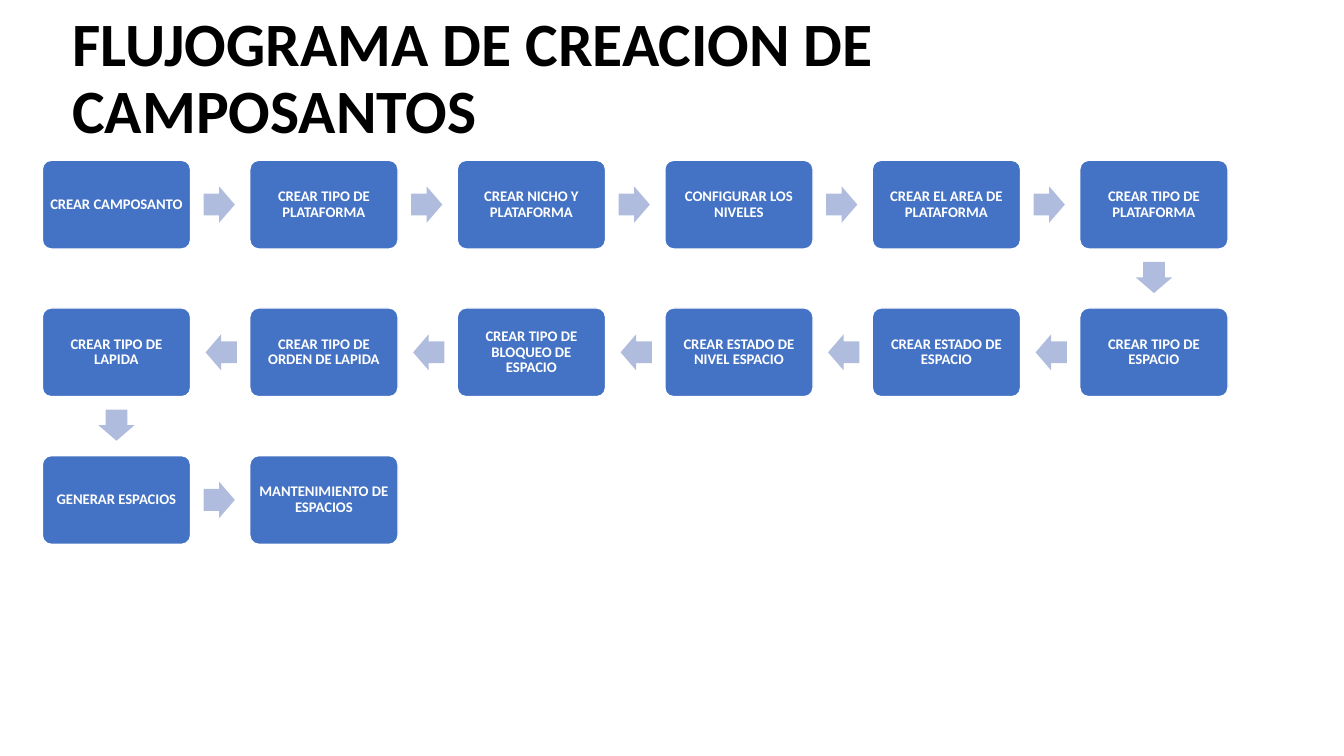
from pptx import Presentation
from pptx import util as u
from pptx.dml.color import RGBColor
from pptx.enum import shapes, text

EMU_PER_PX = 9144  # 100 px to the inch
FONT = "Calibri"
BLUE, PALE_BLUE, WHITE, BLACK = "4472C4", "B0BCDE", "FFFFFF", "000000"

TITLE = "FLUJOGRAMA DE CREACION DE CAMPOSANTOS"
STEPS = [
    "CREAR CAMPOSANTO", "CREAR TIPO DE PLATAFORMA", "CREAR NICHO Y PLATAFORMA",
    "CONFIGURAR LOS NIVELES", "CREAR EL AREA DE PLATAFORMA", "CREAR TIPO DE PLATAFORMA",
    "CREAR TIPO DE ESPACIO", "CREAR ESTADO DE ESPACIO", "CREAR ESTADO DE NIVEL ESPACIO",
    "CREAR TIPO DE BLOQUEO DE ESPACIO", "CREAR TIPO DE ORDEN DE LAPIDA", "CREAR TIPO DE LAPIDA",
    "GENERAR ESPACIOS", "MANTENIMIENTO DE ESPACIOS",
]
COLUMNS, ROWS = 6, 3
STEP_WIDTH, STEP_HEIGHT, STEP_INSET = 147, 88, 5
ARROW_LENGTH, ARROW_BREADTH = 31, 36


def px(length):
    return u.Emu(round(length * EMU_PER_PX))


def color(hex_string):
    return RGBColor.from_string(hex_string)


def write(shape, content, size, hex_string, alignment):
    frame = shape.text_frame
    frame.text = content
    frame.word_wrap = True
    frame.vertical_anchor = text.MSO_ANCHOR.MIDDLE
    paragraph = frame.paragraphs[0]
    paragraph.alignment = alignment
    paragraph.line_spacing = 0.9
    font = paragraph.runs[0].font
    font.name, font.size, font.bold = FONT, u.Pt(size), True
    font.color.rgb = color(hex_string)


def add_filled(slide, kind, box, fill):
    shape = slide.shapes.add_shape(kind, *map(px, box))
    shape.shadow.inherit = False
    shape.fill.solid()
    shape.fill.fore_color.rgb = color(fill)
    return shape


def add_title(slide, box):
    title = slide.shapes.add_textbox(*map(px, box))
    write(title, TITLE, 44, BLACK, text.PP_ALIGN.LEFT)


def add_step(slide, box, label):
    step = add_filled(slide, shapes.MSO_SHAPE.ROUNDED_RECTANGLE, box, BLUE)
    step.adjustments[0] = 0.1
    step.line.color.rgb = color(WHITE)
    step.line.width = u.Pt(1)
    frame = step.text_frame
    frame.margin_left = frame.margin_right = px(STEP_INSET)
    frame.margin_top = frame.margin_bottom = px(STEP_INSET)
    write(step, label, 10.5, WHITE, text.PP_ALIGN.CENTER)


def add_arrow(slide, center_x, center_y, rotation):
    box = (center_x - ARROW_LENGTH / 2, center_y - ARROW_BREADTH / 2,
           ARROW_LENGTH, ARROW_BREADTH)
    arrow = add_filled(slide, shapes.MSO_SHAPE.RIGHT_ARROW, box, PALE_BLUE)
    arrow.adjustments[0], arrow.adjustments[1] = 0.6, 0.5
    arrow.line.fill.background()
    arrow.rotation = rotation


def add_flow(slide, box):
    """Steps run in a snake: every second row goes from right to left."""
    left, top, width, height = box
    pitch_x = (width - STEP_WIDTH) / (COLUMNS - 1)
    pitch_y = (height - STEP_HEIGHT) / (ROWS - 1)
    previous = None
    for index, label in enumerate(STEPS):
        row, column = divmod(index, COLUMNS)
        if row % 2:
            column = COLUMNS - 1 - column
        x, y = left + column * pitch_x, top + row * pitch_y

        # Arrow from the previous step, 1 px nearer to its start
        if previous:
            from_x, from_y = previous
            if y > from_y:
                rotation, shift_x, shift_y = 90, 0, -1
            elif x > from_x:
                rotation, shift_x, shift_y = 0, -1, 0
            else:
                rotation, shift_x, shift_y = 180, 1, 0
            add_arrow(slide, (from_x + x + STEP_WIDTH) / 2 + shift_x,
                      (from_y + y + STEP_HEIGHT) / 2 + shift_y, rotation)

        add_step(slide, (x, y, STEP_WIDTH, STEP_HEIGHT), label)
        previous = x, y


def main():
    presentation = Presentation()
    presentation.slide_width, presentation.slide_height = px(1333), px(750)
    slide = presentation.slides.add_slide(presentation.slide_layouts[6])
    add_flow(slide, (42, 159, 1176, 381))
    add_title(slide, (62, 7, 1220, 145))
    presentation.save("out.pptx")


if __name__ == "__main__":
    main()
